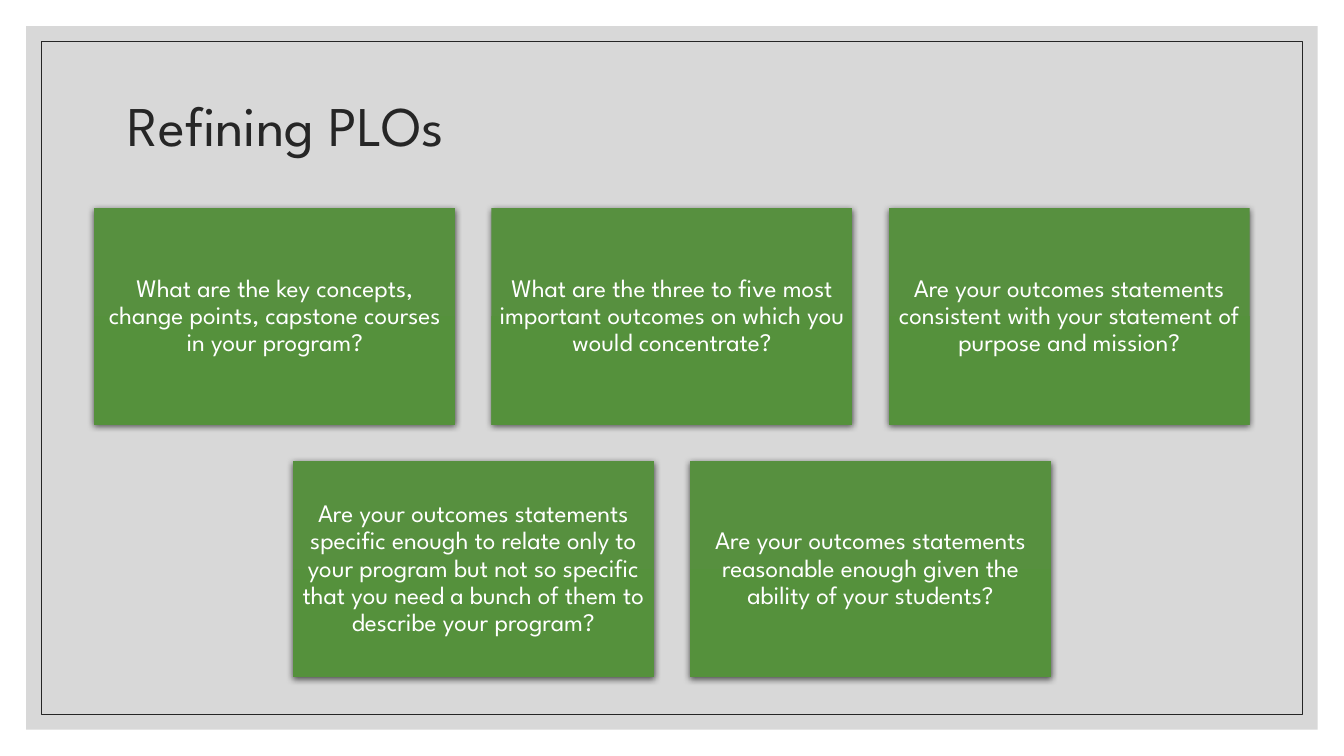
"""Build the "Refining PLOs" slide: a framed panel, a title and five question cards."""
from lxml import etree
from pptx import Presentation
from pptx.dml.color import RGBColor
from pptx.enum.shapes import MSO_SHAPE
from pptx.enum.text import MSO_ANCHOR, PP_ALIGN
from pptx.oxml.ns import qn
from pptx.util import Cm, Pt

TITLE = "Refining PLOs"
QUESTION_ROWS = [
    [
        "What are the key concepts, change points, capstone courses in your program?",
        "What are the three to five most important outcomes on which you would concentrate?",
        "Are your outcomes statements consistent with your statement of purpose and mission?",
    ],
    [
        "Are your outcomes statements specific enough to relate only to your program "
        "but not so specific that you need a bunch of them to describe your program?",
        "Are your outcomes statements reasonable enough given the ability of your students?",
    ],
]

RECTANGLE = MSO_SHAPE.RECTANGLE
MIDDLE = MSO_ANCHOR.MIDDLE
LEFT, CENTER = PP_ALIGN.LEFT, PP_ALIGN.CENTER

FONT = "League Spartan"
WHITE = RGBColor(0xFF, 0xFF, 0xFF)
INK = RGBColor(0x26, 0x26, 0x26)
PANEL_GRAY = RGBColor(0xBF, 0xBF, 0xBF)
GREEN_TOP = RGBColor(0x57, 0x90, 0x3F)
GREEN_BOTTOM = RGBColor(0x55, 0x91, 0x3C)

SLIDE_WIDTH, SLIDE_HEIGHT = Cm(33.87), Cm(19.05)
PANEL_MARGIN, FRAME_MARGIN = Cm(0.66), Cm(1.04)
CARD_WIDTH, CARD_HEIGHT, CARD_GAP = Cm(9.1), Cm(5.46), Cm(0.91)
CARDS_TOP = Cm(5.24)
CARD_INSET = Cm(0.18)


def add_rectangle(slide, left, top, width, height):
    shape = slide.shapes.add_shape(RECTANGLE, left, top, width, height)
    shape.shadow.inherit = False
    shape.line.fill.background()
    return shape


def add_inset_rectangle(slide, margin):
    return add_rectangle(slide, margin, margin,
                         SLIDE_WIDTH - 2 * margin, SLIDE_HEIGHT - 2 * margin)


def write_text(shape, text, size, color, alignment):
    frame = shape.text_frame
    frame.word_wrap = True
    frame.vertical_anchor = MIDDLE
    paragraph = frame.paragraphs[0]
    paragraph.alignment = alignment
    paragraph.line_spacing = 0.9
    run = paragraph.add_run()
    run.text = text
    run.font.name = FONT
    run.font.size = Pt(size)
    run.font.color.rgb = color


def add_alpha(color_element, percent):
    etree.SubElement(color_element, qn("a:alpha"), val=str(percent * 1000))


def add_soft_shadow(shape):
    effects = shape.element.spPr.find(qn("a:effectLst"))
    shadow = etree.SubElement(effects, qn("a:outerShdw"), blurRad=str(Pt(4.5)),
                              dist=str(Pt(1.5)), dir="5400000", rotWithShape="0")
    add_alpha(etree.SubElement(shadow, qn("a:srgbClr"), val="000000"), 63)


def add_card(slide, left, top, question):
    card = add_rectangle(slide, left, top, CARD_WIDTH, CARD_HEIGHT)
    card.fill.gradient()
    card.fill.gradient_angle = 270
    for stop, color in zip(card.fill.gradient_stops, (GREEN_TOP, GREEN_BOTTOM)):
        stop.color.rgb = color
    add_soft_shadow(card)
    frame = card.text_frame
    frame.margin_left = frame.margin_right = CARD_INSET
    frame.margin_top = frame.margin_bottom = CARD_INSET
    write_text(card, question, 18, WHITE, CENTER)


def main():
    presentation = Presentation()
    presentation.slide_width, presentation.slide_height = SLIDE_WIDTH, SLIDE_HEIGHT
    slide = presentation.slides.add_slide(presentation.slide_layouts[6])

    panel = add_inset_rectangle(slide, PANEL_MARGIN)
    panel.fill.solid()
    panel.fill.fore_color.rgb = PANEL_GRAY
    add_alpha(panel.element.spPr.find(qn("a:solidFill"))[0], 60)

    frame = add_inset_rectangle(slide, FRAME_MARGIN)
    frame.fill.background()
    frame.line.color.rgb = INK
    frame.line.width = Pt(0.5)

    title = slide.shapes.add_textbox(Cm(2.97), Cm(1.78), Cm(27.94), Cm(2.9))
    write_text(title, TITLE, 40, INK, LEFT)

    for row, questions in enumerate(QUESTION_ROWS):
        row_width = len(questions) * (CARD_WIDTH + CARD_GAP) - CARD_GAP
        row_left = (SLIDE_WIDTH - row_width) // 2
        top = CARDS_TOP + row * (CARD_HEIGHT + CARD_GAP)
        for column, question in enumerate(questions):
            add_card(slide, row_left + column * (CARD_WIDTH + CARD_GAP), top, question)

    presentation.save("out.pptx")


if __name__ == "__main__":
    main()
